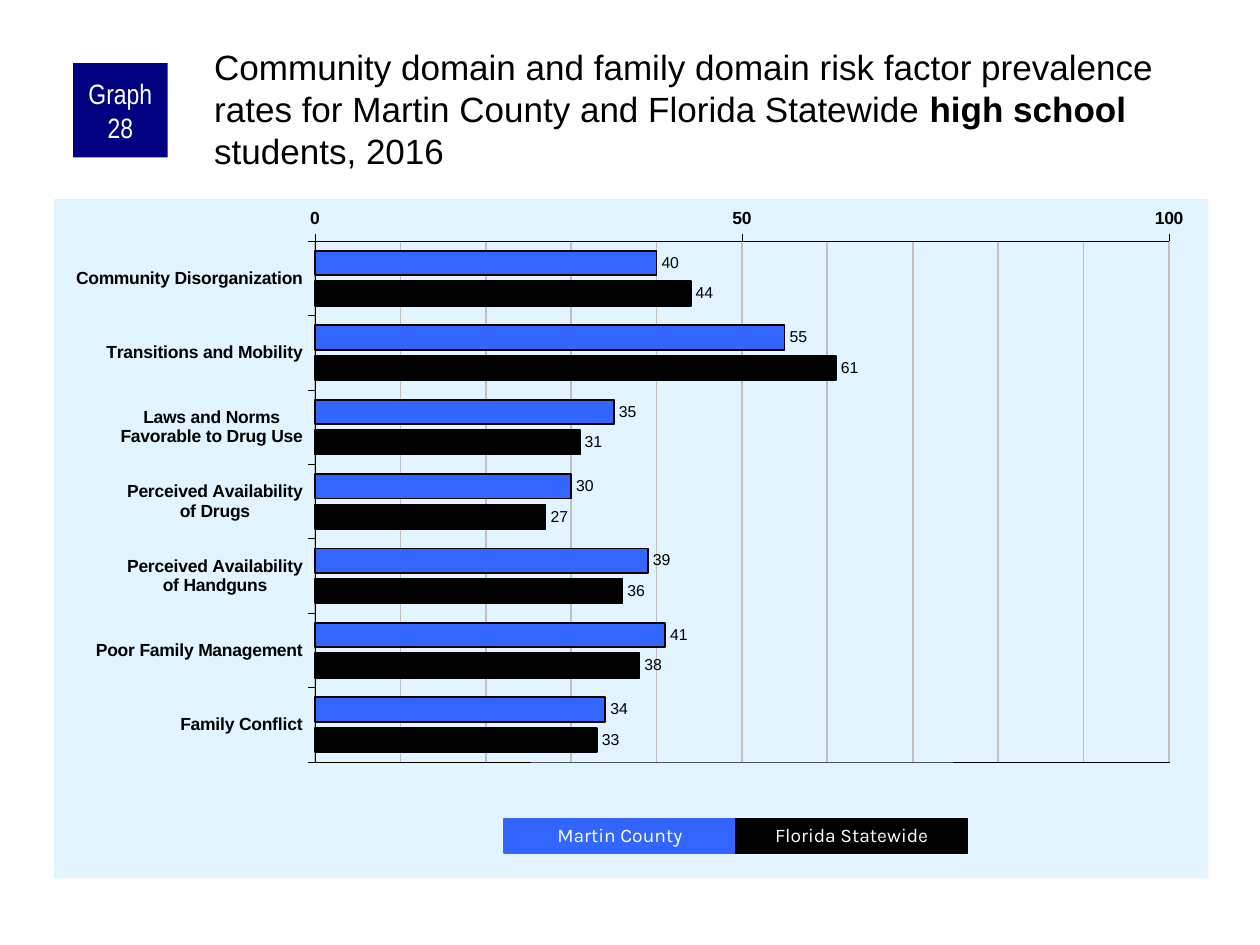
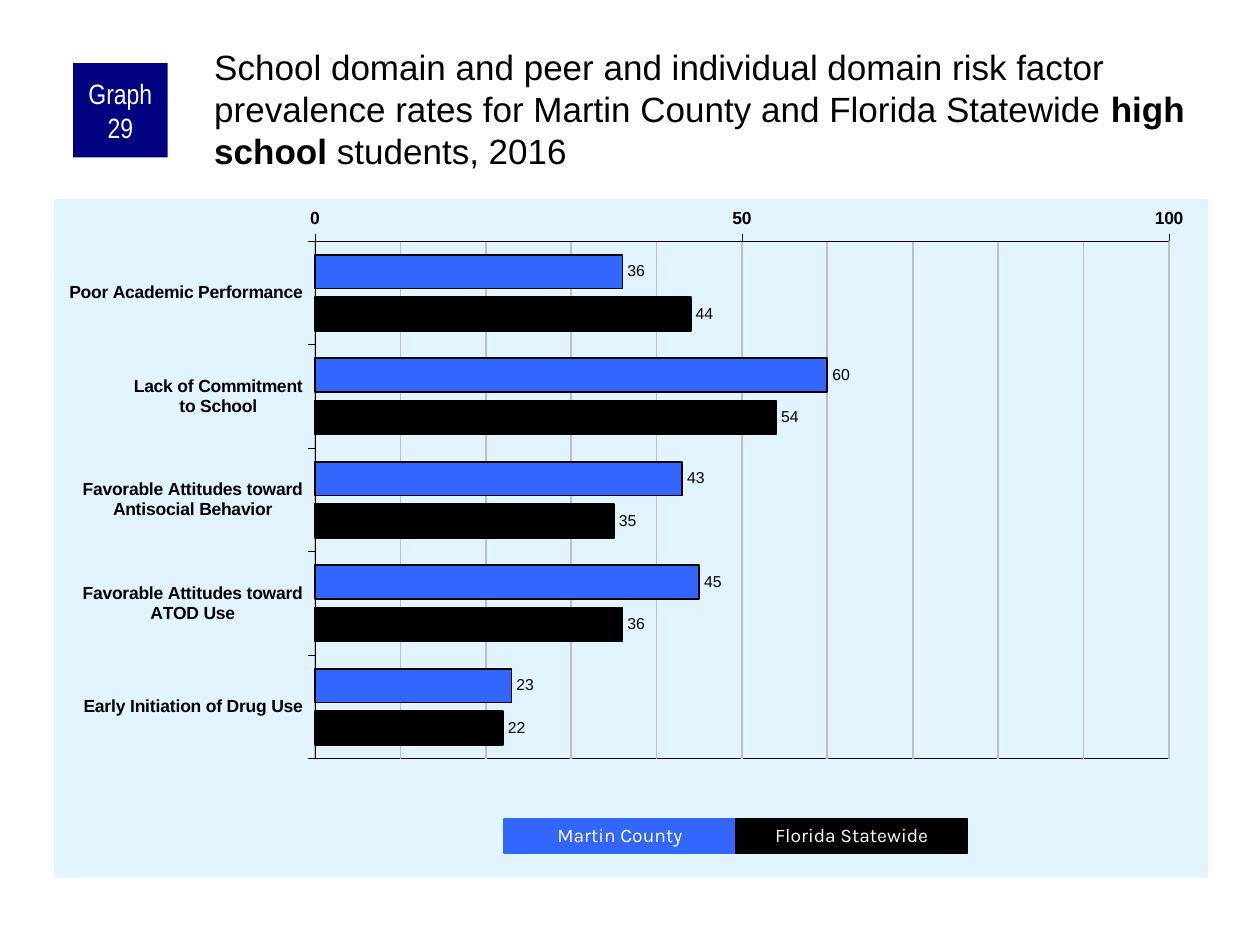
"""Build two slides comparing risk factor prevalence in Martin County and Florida."""
from copy import deepcopy
from dataclasses import dataclass

from pptx import Presentation, oxml, util as u
from pptx.chart import data
from pptx.dml.color import RGBColor
from pptx.enum import chart as ch, shapes, text
from pptx.oxml import ns

COLOURS = {
    "panel": "E1F4FF",
    "badge": "000080",
    "county": "3366FF",
    "state": "000000",
    "grid": "C0C0C0",
    "ink": "000000",
    "light": "FFFFFF",
}


@dataclass(frozen=True)
class Region:
    name: str
    colour: str


@dataclass(frozen=True)
class RiskGraph:
    number: int
    domains: str
    rates: dict[str, tuple[int, int]]


REGIONS = (Region("Martin County", "county"), Region("Florida Statewide", "state"))

GRAPHS = (
    RiskGraph(28, "Community domain and family domain", {
        "Community Disorganization": (40, 44),
        "Transitions and Mobility": (55, 61),
        "Laws and Norms\nFavorable to Drug Use": (35, 31),
        "Perceived Availability\nof Drugs": (30, 27),
        "Perceived Availability\nof Handguns": (39, 36),
        "Poor Family Management": (41, 38),
        "Family Conflict": (34, 33),
    }),
    RiskGraph(29, "School domain and peer and individual domain", {
        "Poor Academic Performance": (36, 44),
        "Lack of Commitment\nto School": (60, 54),
        "Favorable Attitudes toward\nAntisocial Behavior": (43, 35),
        "Favorable Attitudes toward\nATOD Use": (45, 36),
        "Early Initiation of Drug Use": (23, 22),
    }),
)


def rgb(name: str) -> RGBColor:
    return RGBColor.from_string(COLOURS[name])


def inches(*lengths: float) -> list[u.Length]:
    return [u.Inches(length) for length in lengths]


def style_font(font, size: float, face: str = "Arial", colour: str = "ink", bold: bool = False) -> None:
    font.size, font.name, font.bold = u.Pt(size), face, bold
    font.color.rgb = rgb(colour)


def write(paragraph, words: str, **font_format) -> None:
    run = paragraph.add_run()
    run.text = words
    style_font(run.font, **font_format)


def style_line(line, colour: str, width: float) -> None:
    line.color.rgb = rgb(colour)
    line.width = u.Pt(width)


def set_margins(frame, left: float, top: float, right: float, bottom: float) -> None:
    frame.margin_left, frame.margin_top, frame.margin_right, frame.margin_bottom = inches(
        left, top, right, bottom)


def add_box(slide, left: float, top: float, width: float, height: float, colour: str):
    box = slide.shapes.add_shape(shapes.MSO_SHAPE.RECTANGLE, *inches(left, top, width, height))
    box.shadow.inherit = False
    box.fill.solid()
    box.fill.fore_color.rgb = rgb(colour)
    box.line.fill.background()
    box.text_frame.word_wrap = True
    box.text_frame.paragraphs[0].alignment = text.PP_ALIGN.CENTER
    return box


def add_badge(slide, number: int) -> None:
    frame = add_box(slide, 0.58, 0.5, 0.75, 0.75, "badge").text_frame
    frame.vertical_anchor = text.MSO_ANCHOR.MIDDLE
    set_margins(frame, 0.05, 0, 0.05, 0)
    write(frame.paragraphs[0], f"Graph {number}", size=16, face="Arial Narrow", colour="light")


def add_title(slide, domains: str) -> None:
    frame = slide.shapes.add_textbox(*inches(1.67, 0.33, 7.92, 0.83)).text_frame
    frame.word_wrap = True
    set_margins(frame, 0.03, 0.03, 0, 0)
    title = frame.paragraphs[0]
    write(title, f"{domains} risk factor prevalence rates for Martin County and Florida Statewide ", size=20)
    write(title, "high school", size=20, bold=True)
    write(title, " students, 2016", size=20)


def add_key(slide) -> None:
    width = 1.84
    for index, region in enumerate(REGIONS):
        key = add_box(slide, 4 + index * width, 6.5, width, 0.27, region.colour)
        style_line(key.line, region.colour, 0.75)
        key.text_frame.auto_size = text.MSO_AUTO_SIZE.SHAPE_TO_FIT_TEXT
        label = key.text_frame.paragraphs[0]
        label.line_spacing = 0.9
        write(label, region.name, size=11, face="Karla", colour="light")


def style_axes(chart) -> None:
    for axis in (chart.category_axis, chart.value_axis):
        axis.major_tick_mark = ch.XL_TICK_MARK.OUTSIDE
        axis.minor_tick_mark = ch.XL_TICK_MARK.NONE
        style_font(axis.tick_labels.font, 10, bold=True)
        style_line(axis.format.line, "ink", 0.25)
    chart.category_axis.reverse_order = True
    chart.category_axis.crosses = ch.XL_AXIS_CROSSES.MAXIMUM
    rate = chart.value_axis
    rate.minimum_scale, rate.maximum_scale = 0, 100
    rate.major_unit, rate.minor_unit = 50, 10
    rate.has_major_gridlines = rate.has_minor_gridlines = True
    style_line(rate.major_gridlines.format.line, "grid", 1)
    major, minor = (chart.element.find(".//" + ns.qn(f"c:{level}Gridlines")) for level in ("major", "minor"))
    minor.append(deepcopy(major.find(ns.qn("c:spPr"))))


def style_areas(chart) -> None:
    root = ns.nsdecls("c", "a")
    panel = (f'<c:spPr {root}><a:solidFill><a:srgbClr val="{COLOURS["panel"]}"/></a:solidFill>'
             '<a:ln><a:noFill/></a:ln></c:spPr>')
    chart.element.find(ns.qn("c:chart")).addnext(oxml.parse_xml(panel))

    plot_area = chart.element.find(".//" + ns.qn("c:plotArea"))
    for layout in plot_area.findall(ns.qn("c:layout")):
        plot_area.remove(layout)
    modes = '<c:layoutTarget val="inner"/><c:xMode val="edge"/><c:yMode val="edge"/>'
    shares = zip("xywh", (0.226, 0.062, 0.74, PLOT_HEIGHTS[len(chart.plots[0].categories)]))
    sizes = "".join(f'<c:{side} val="{share}"/>' for side, share in shares)
    manual = f"<c:layout {root}><c:manualLayout>{modes}{sizes}</c:manualLayout></c:layout>"
    plot_area.insert(0, oxml.parse_xml(manual))
    border = (f'<c:spPr {root}><a:noFill/><a:ln w="{u.Pt(0.25)}"><a:solidFill>'
              f'<a:srgbClr val="{COLOURS["ink"]}"/></a:solidFill></a:ln></c:spPr>')
    plot_area.append(oxml.parse_xml(border))


PLOT_HEIGHTS = {7: 0.767, 5: 0.762}


def add_rates(slide, graph: RiskGraph) -> None:
    rates = data.CategoryChartData()
    rates.categories = list(graph.rates)
    for region, values in zip(REGIONS, zip(*graph.rates.values())):
        rates.add_series(region.name, values)
    chart = slide.shapes.add_chart(
        ch.XL_CHART_TYPE.BAR_CLUSTERED, *inches(0.43, 1.58, 9.16, 5.39), rates).chart
    chart.has_legend = chart.has_title = False
    style_font(chart.font, 11.8)
    bars = chart.plots[0]
    bars.gap_width, bars.overlap, bars.vary_by_categories = 80, -25, False
    for region, series in zip(REGIONS, bars.series):
        series.invert_if_negative = False
        series.format.fill.solid()
        series.format.fill.fore_color.rgb = rgb(region.colour)
        style_line(series.format.line, "ink", 1)
        labels = series.data_labels
        labels.show_value = True
        labels.position = ch.XL_LABEL_POSITION.OUTSIDE_END
        style_font(labels.font, 9)
    style_axes(chart)
    style_areas(chart)


def main() -> None:
    deck = Presentation()
    deck.slide_width, deck.slide_height = inches(10, 7.5)
    for graph in GRAPHS:
        slide = deck.slides.add_slide(deck.slide_layouts[6])
        add_rates(slide, graph)
        add_badge(slide, graph.number)
        add_title(slide, graph.domains)
        add_key(slide)
    deck.save("out.pptx")


if __name__ == "__main__":
    main()
